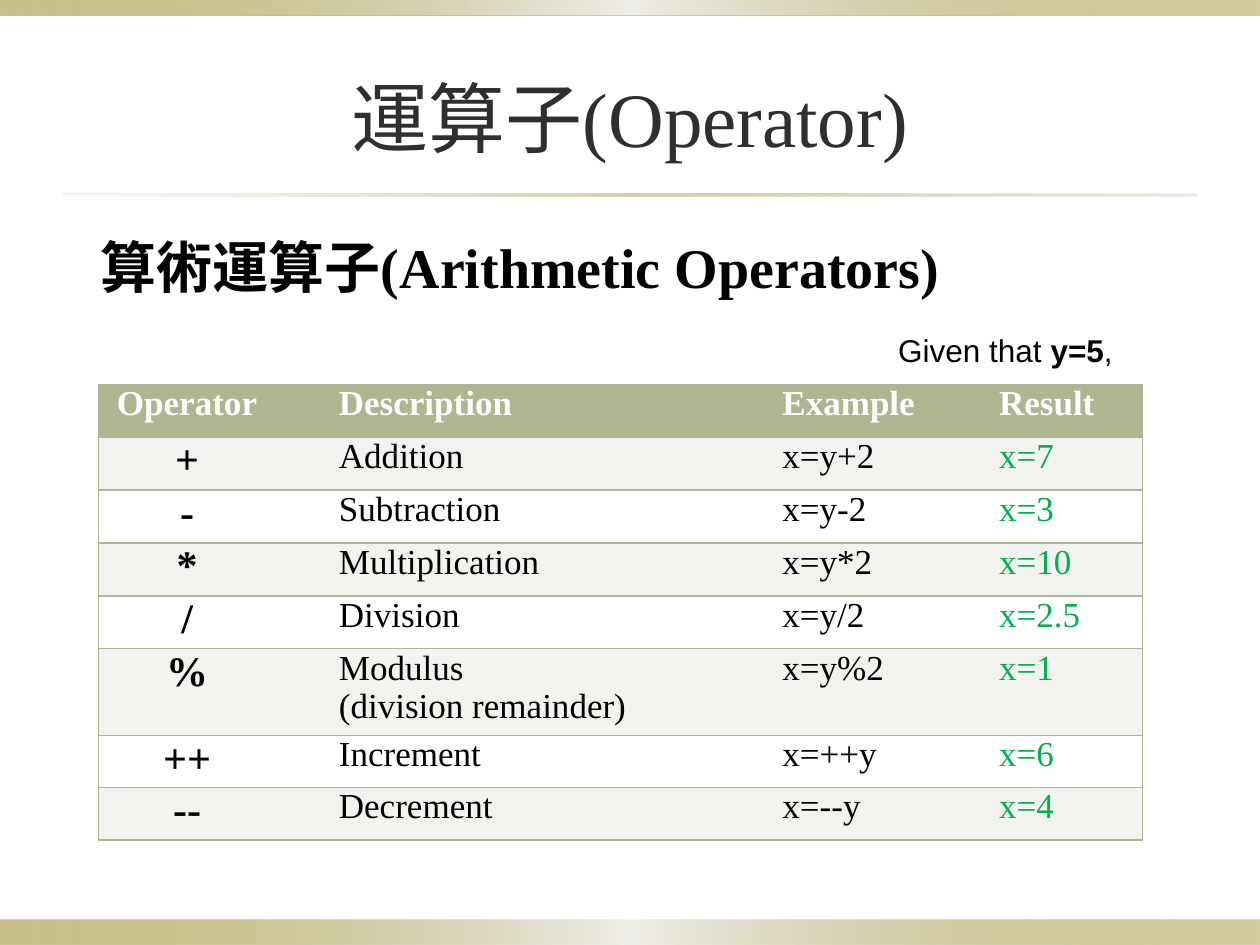
from pptx import Presentation
from pptx.dml.color import RGBColor
from pptx.enum.shapes import MSO_SHAPE
from pptx.enum.text import MSO_ANCHOR, PP_ALIGN
from pptx.oxml import parse_xml
from pptx.util import Inches, Pt

COLORS = {
    "olive": "918415", "mist": "EEEDE8", "sand": "DCD9CC",
    "title": "2F2F2F", "text": "000000", "result": "00B050",
    "sage": "AFB591", "band": "F2F3EE", "white": "FFFFFF",
}
NAMESPACE = 'xmlns:a="http://schemas.openxmlformats.org/drawingml/2006/main"'
SERIF = "Times New Roman"


def write_runs(paragraph, texts, color, **font_format):
    """Add (text, bold) runs that share a colour and font format."""
    for text, bold in texts:
        run = paragraph.add_run()
        run.text = text
        for name, value in {**font_format, "bold": bold}.items():
            setattr(run.font, name, value)
        run.font.color.rgb = RGBColor.from_string(COLORS[color])


presentation = Presentation()
presentation.slide_width = Inches(10)
presentation.slide_height = Inches(7.5)
slide = presentation.slides.add_slide(presentation.slide_layouts[6])

# Gradient bars: left, top, width, height, then (colour, opacity in percent)
band_stops = [("olive", 50), ("mist", 100), ("olive", 40)]
rule_stops = [("sand", 20), ("olive", 40), ("sand", 50)]
bars = [
    (0, 7.3, 10, 0.2, band_stops),
    (0, 0, 10, 0.12, band_stops),
    (0.5, 1.54, 9, 0.02, rule_stops),
]
for *box, stops in bars:
    bar = slide.shapes.add_shape(MSO_SHAPE.RECTANGLE, *map(Inches, box))
    bar.shadow.inherit = False
    bar.line.fill.background()
    bar.fill.gradient()
    bar.fill.gradient_angle = 0
    stop_list = bar.fill._fill._gradFill.find(
        "{http://schemas.openxmlformats.org/drawingml/2006/main}gsLst")
    stop_list.clear()
    for index, (color, opacity) in enumerate(stops):
        stop_list.append(parse_xml(
            f'<a:gs {NAMESPACE} pos="{index * 50000}"><a:srgbClr val="{COLORS[color]}">'
            f'<a:alpha val="{opacity * 1000}"/></a:srgbClr></a:gs>'))

# Title, heading and note
text_boxes = [
    ((0.5, 0.3, 9, 1.25), [("運算子(Operator)", False)], 44, SERIF, "title",
     PP_ALIGN.CENTER, MSO_ANCHOR.MIDDLE),
    ((0.7, 1.8, 9, 0.7), [("算術運算子(Arithmetic Operators)", True)], 32, SERIF, "text",
     PP_ALIGN.LEFT, MSO_ANCHOR.TOP),
    ((7.03, 2.58, 1.99, 0.4), [("Given that ", False), ("y=5", True), (",", False)],
     18, "Arial", "text", PP_ALIGN.LEFT, MSO_ANCHOR.TOP),
]
for box, texts, size, font, color, alignment, anchor in text_boxes:
    frame = slide.shapes.add_textbox(*map(Inches, box)).text_frame
    frame.word_wrap = True
    frame.vertical_anchor = anchor
    frame.paragraphs[0].alignment = alignment
    write_runs(frame.paragraphs[0], texts, color, size=Pt(size), name=font)

# Operator table
rows = [
    ("Operator", "Description", "Example", "Result"),
    ("+", "Addition", "x=y+2", "x=7"),
    ("-", "Subtraction", "x=y-2", "x=3"),
    ("*", "Multiplication", "x=y*2", "x=10"),
    ("/", "Division", "x=y/2", "x=2.5"),
    ("%", "Modulus \n(division remainder)", "x=y%2", "x=1"),
    ("++", "Increment", "x=++y", "x=6"),
    ("--", "Decrement", "x=--y", "x=4"),
]
column_widths = [1.41, 3.52, 1.72, 1.64]
row_heights = [0.42] * 5 + [0.69, 0.41, 0.42]
last_column = len(column_widths) - 1
table = slide.shapes.add_table(
    len(rows), len(column_widths), Inches(0.78), Inches(3.05),
    Inches(sum(column_widths)), Inches(sum(row_heights))).table
for column, width in zip(table.columns, column_widths):
    column.width = Inches(width)
for row, height in zip(table.rows, row_heights):
    row.height = Inches(height)

line_fill = f'<a:solidFill><a:srgbClr val="{COLORS["sage"]}"/></a:solidFill>'
for row_index, row in enumerate(rows):
    is_header = row_index == 0
    fill = "sage" if is_header else ("white", "band")[row_index % 2]
    for column_index, text in enumerate(row):
        cell = table.cell(row_index, column_index)
        for side in ("left", "right", "top", "bottom"):
            setattr(cell, f"margin_{side}", 0)

        borders = {"L": column_index == 0, "R": column_index == last_column,
                   "T": True, "B": True}
        properties = cell._tc.get_or_add_tcPr()
        for side, visible in borders.items():
            properties.append(parse_xml(
                f'<a:ln{side} {NAMESPACE} w="12700">'
                f'{line_fill if visible else "<a:noFill/>"}</a:ln{side}>'))
        cell.fill.solid()
        cell.fill.fore_color.rgb = RGBColor.from_string(COLORS[fill])

        paragraph = cell.text_frame.paragraphs[0]
        is_operator = column_index == 0
        if is_operator:
            paragraph.alignment = PP_ALIGN.CENTER
        else:
            paragraph._p.get_or_add_pPr().set("marL", str(Inches(0.5)))
        if is_header:
            color = "white"
        else:
            color = "result" if column_index == last_column else "text"
        size = 24 if is_operator and not is_header else 20
        for line_index, line in enumerate(text.split("\n")):
            if line_index:
                paragraph.add_line_break()
            write_runs(paragraph, [(line, is_header or is_operator)], color,
                       size=Pt(size), name=SERIF)

presentation.save("out.pptx")
